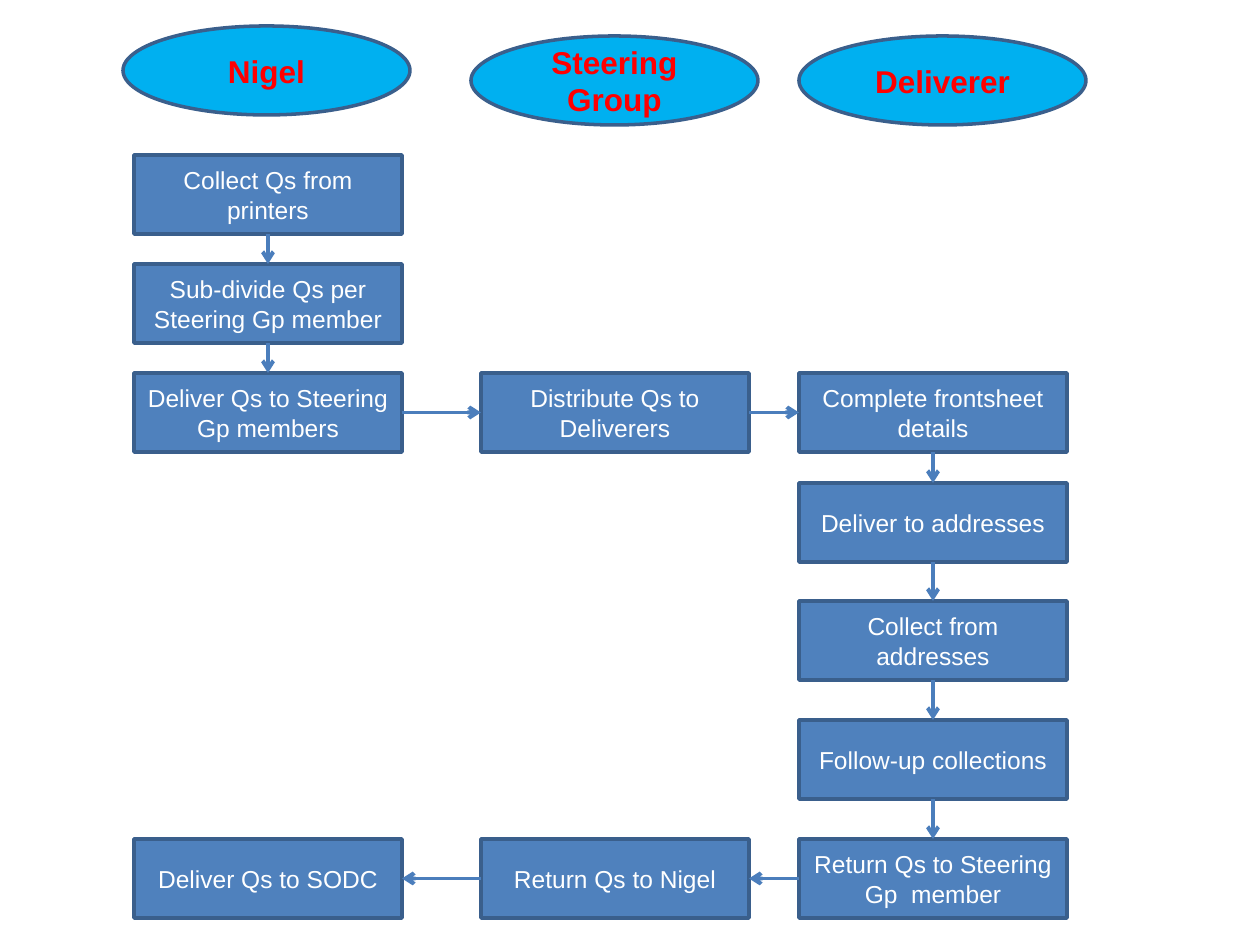
import itertools

import pptx
import pptx.dml.color
import pptx.enum.shapes
import pptx.enum.text
import pptx.oxml
import pptx.oxml.ns
import pptx.util
from dataclasses import dataclass

EMU_PER_PX = 914400 / 126
TOP, LEFT, BOTTOM, RIGHT = range(4)


@dataclass(frozen=True)
class Theme:
    font: str = "Arial"
    step_fill: str = "4F81BD"
    step_text: str = "FFFFFF"
    role_fill: str = "00B0F0"
    role_text: str = "FF0000"
    outline: str = "3A5F8C"
    arrow: str = "4B7EBC"
    step_size: int = 14
    role_size: int = 18
    outline_width: float = 2
    arrow_width: float = 2.25


def px(length):
    return pptx.util.Emu(round(length * EMU_PER_PX))


def rgb(value):
    return pptx.dml.color.RGBColor.from_string(value)


class FlowChart:
    """Holds the theme and the slide being drawn on."""

    def __init__(self, slide, theme):
        self.slide = slide
        self.theme = theme

    def _labelled_shape(self, kind, text, box, fill, text_format, color):
        shape = self.slide.shapes.add_shape(kind, *map(px, box))
        shape.shadow.inherit = False
        shape.fill.solid()
        shape.fill.fore_color.rgb = rgb(fill)
        shape.line.color.rgb = rgb(self.theme.outline)
        shape.line.width = pptx.util.Pt(self.theme.outline_width)
        frame = shape.text_frame
        frame.word_wrap = True
        frame.vertical_anchor = pptx.enum.text.MSO_ANCHOR.MIDDLE
        paragraph = frame.paragraphs[0]
        paragraph.alignment = pptx.enum.text.PP_ALIGN.CENTER
        run = paragraph.add_run()
        run.text = text
        for name, value in text_format.items():
            setattr(run.font, name, value)
        run.font.color.rgb = rgb(color)
        return shape

    def role(self, text, box):
        text_format = {"name": self.theme.font, "bold": True,
                       "size": pptx.util.Pt(self.theme.role_size)}
        return self._labelled_shape(
            pptx.enum.shapes.MSO_SHAPE.OVAL, text, box,
            self.theme.role_fill, text_format, self.theme.role_text)

    def step(self, text, box):
        text_format = {"name": self.theme.font, "bold": False,
                       "size": pptx.util.Pt(self.theme.step_size)}
        return self._labelled_shape(
            pptx.enum.shapes.MSO_SHAPE.RECTANGLE, text, box,
            self.theme.step_fill, text_format, self.theme.step_text)

    def arrow(self, start, end):
        if start.left == end.left:
            sides = BOTTOM, TOP
        elif start.left < end.left:
            sides = RIGHT, LEFT
        else:
            sides = LEFT, RIGHT
        connector = self.slide.shapes.add_connector(
            pptx.enum.shapes.MSO_CONNECTOR.STRAIGHT, 0, 0, 0, 0)
        connector.begin_connect(start, sides[0])
        connector.end_connect(end, sides[1])
        connector.line.color.rgb = rgb(self.theme.arrow)
        connector.line.width = pptx.util.Pt(self.theme.arrow_width)
        # Arrowhead, and an empty effect list to drop the shadow
        line = connector.line._get_or_add_ln()
        head = pptx.oxml.parse_xml(
            f'<a:tailEnd {pptx.oxml.ns.nsdecls("a")} type="arrow"/>')
        line.append(head)
        line.addnext(pptx.oxml.parse_xml(
            f'<a:effectLst {pptx.oxml.ns.nsdecls("a")}/>'))
        return connector


# Grid: one column per role, one row per stage
COLUMNS = {"Nigel": 134, "Steering": 481, "Deliverer": 799}
ROWS = [155, 264, 373, 483, 601, 720, 839]
STEP_SIZE = (268, 79)
ROLE_SIZE = (287, 89)

ROLES = [
    ("Nigel", 123, 26),
    ("Steering Group", 471, 36),
    ("Deliverer", 799, 36),
]

# Steps in working order: text, column, row
STEPS = [
    ("Collect Qs from printers", "Nigel", 0),
    ("Sub-divide Qs per Steering Gp member", "Nigel", 1),
    ("Deliver Qs to Steering Gp members", "Nigel", 2),
    ("Distribute Qs to Deliverers", "Steering", 2),
    ("Complete frontsheet details", "Deliverer", 2),
    ("Deliver to addresses", "Deliverer", 3),
    ("Collect from addresses", "Deliverer", 4),
    ("Follow-up collections", "Deliverer", 5),
    ("Return Qs to Steering Gp  member", "Deliverer", 6),
    ("Return Qs to Nigel", "Steering", 6),
    ("Deliver Qs to SODC", "Nigel", 6),
]


def main():
    presentation = pptx.Presentation()
    presentation.slide_width = px(1260)
    presentation.slide_height = px(945)
    slide = presentation.slides.add_slide(presentation.slide_layouts[6])
    chart = FlowChart(slide, Theme())

    # Steps, each joined to the next
    steps = [chart.step(text, (COLUMNS[column], ROWS[row], *STEP_SIZE))
             for text, column, row in STEPS]
    for start, end in itertools.pairwise(steps):
        chart.arrow(start, end)

    # Role headings
    for text, left, top in ROLES:
        chart.role(text, (left, top, *ROLE_SIZE))

    presentation.save("out.pptx")


if __name__ == "__main__":
    main()
